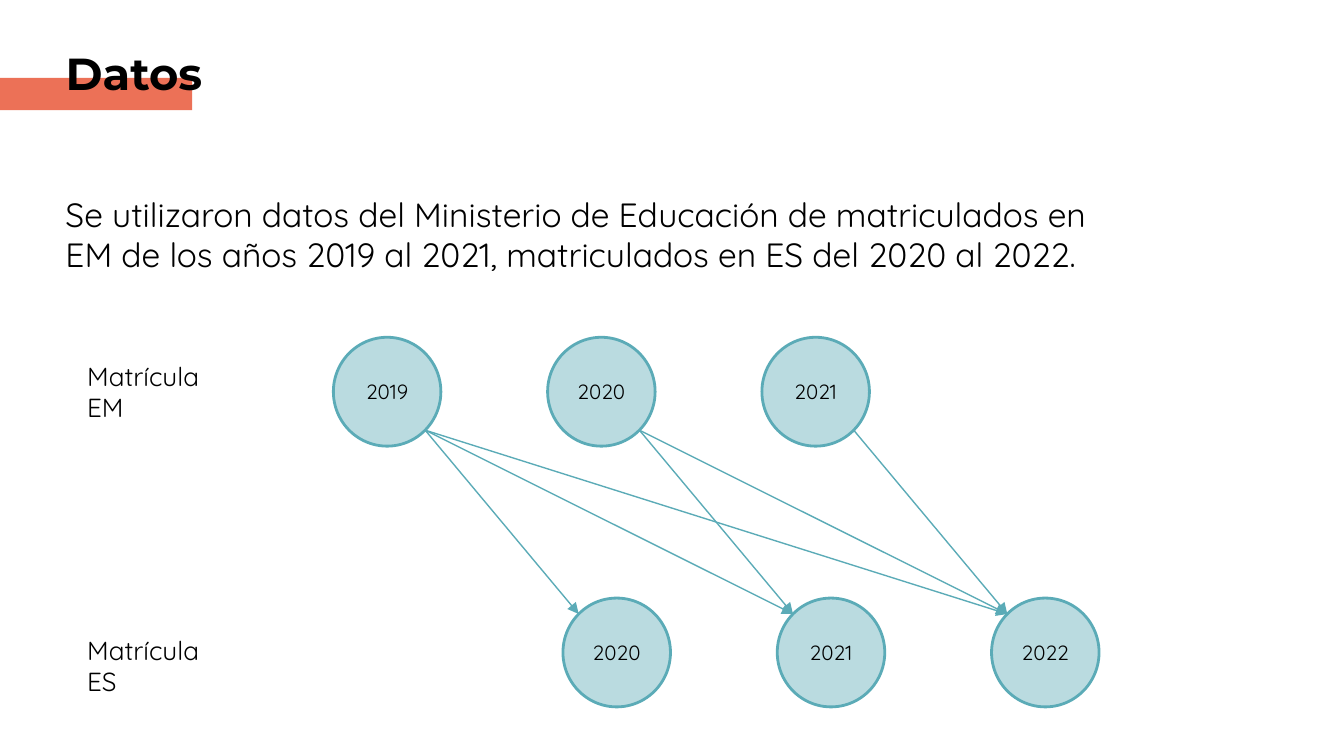
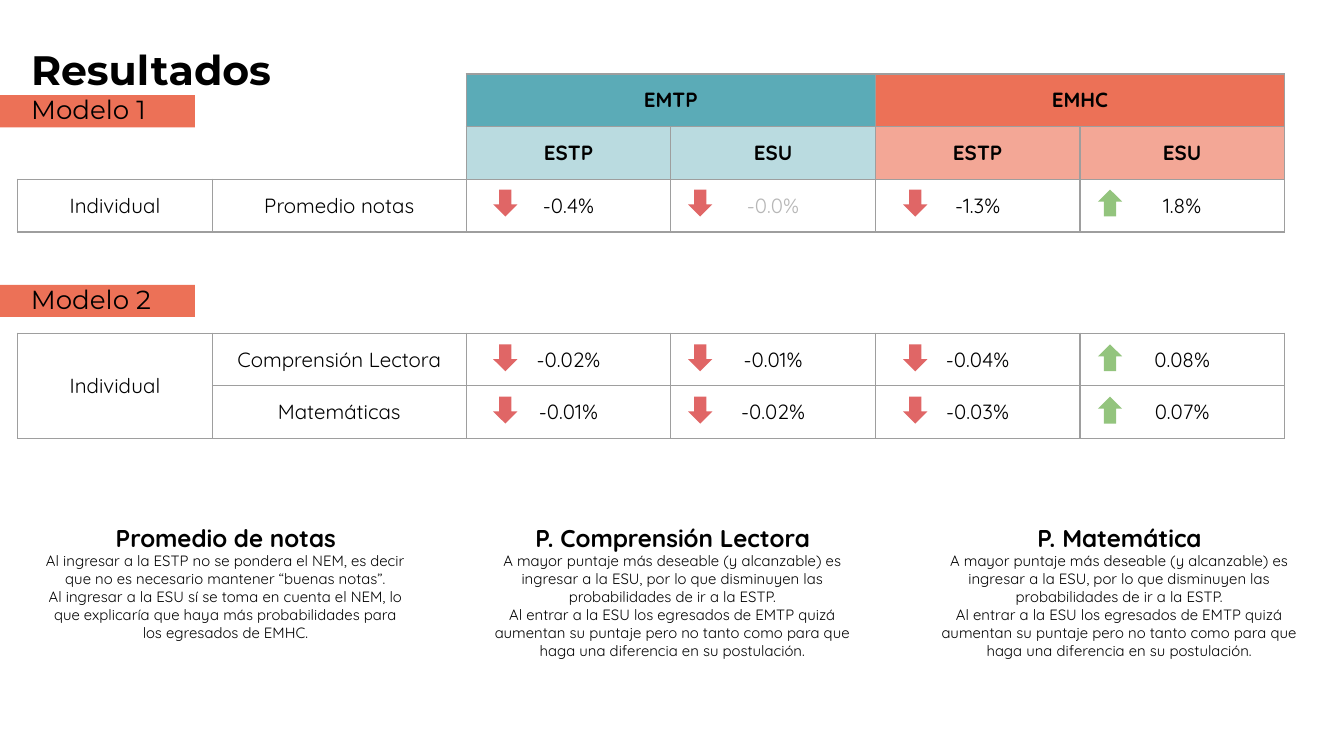
from dataclasses import dataclass
from itertools import product
from math import sqrt

from lxml.etree import SubElement
from pptx import Presentation
from pptx.dml.color import RGBColor
from pptx.enum.shapes import MSO_CONNECTOR, MSO_SHAPE
from pptx.enum.text import MSO_ANCHOR, MSO_AUTO_SIZE, PP_ALIGN
from pptx.oxml.ns import qn
from pptx.util import Pt


@dataclass(frozen=True)
class Theme:
    coral: str = "EC7157"
    teal: str = "5BABB7"
    red: str = "E06666"
    green: str = "93C47D"
    black: str = "000000"
    muted: str = "B7B7B7"
    border: str = "9E9E9E"
    heading: str = "Montserrat"
    body: str = "Quicksand"
    title_size: float = 24
    results_size: float = 22
    lead_size: float = 18
    label_size: float = 14
    note_title_size: float = 13
    cell_size: float = 11
    note_size: float = 8
    inset: float = 7.2
    thin: float = 0.75


T = Theme()


@dataclass(frozen=True)
class Box:
    left: float
    top: float
    width: float
    height: float

    def lengths(self) -> tuple:
        return Pt(self.left), Pt(self.top), Pt(self.width), Pt(self.height)


@dataclass(frozen=True)
class YearRow:
    label: str
    label_top: float
    left: float
    top: float
    years: tuple


@dataclass(frozen=True)
class Cell:
    text: str
    bold: bool = False
    colour: str = T.black
    fill: str = ""
    alpha: int = 100
    rows: int = 1
    cols: int = 1


@dataclass(frozen=True)
class Note:
    title: str
    paragraphs: tuple


# Slide 1: enrolment years
STEP, CIRCLE_W, CIRCLE_H = 114.8, 57.6, 58.3
EM = YearRow("Matrícula EM", 185.8, 178.6, 180.7, (2019, 2020, 2021))
ES = YearRow("Matrícula ES", 332.6, 301.6, 320.4, (2020, 2021, 2022))

# Slide 2: tables and notes
COLUMNS = (104.4, 136, 109.6, 109.6, 109.6, 109.6)
ROW_H = 28
TABLE_LEFT = 9.4
ARROW_LEFTS = {2: 264.2, 3: 368.6, 4: 483.8, 5: 588.2}

MODEL_1 = (
    (None, None, Cell("EMTP", True, fill=T.teal, cols=2), None,
     Cell("EMHC", True, fill=T.coral, cols=2), None),
    (None, None, *(Cell(name, True, fill=fill, alpha=alpha)
                   for fill, alpha in ((T.teal, 42), (T.coral, 62))
                   for name in ("ESTP", "ESU"))),
    (Cell("Individual"), Cell("Promedio notas"), Cell("-0.4%"),
     Cell("-0.0%", colour=T.muted), Cell("-1.3%"), Cell("1.8%")),
)
MODEL_2 = (
    (Cell("Individual", rows=2), *map(Cell, (
        "Comprensión Lectora", "-0.02%", "-0.01%", "-0.04%", "0.08%"))),
    (None, *map(Cell, ("Matemáticas", "-0.01%", "-0.02%", "-0.03%", "0.07%"))),
)

SCORE_TEXT = (
    "A mayor puntaje más deseable (y alcanzable) es ingresar a la ESU, por lo que "
    "disminuyen las probabilidades de ir a la ESTP.",
    "Al entrar a la ESU los egresados de EMTP quizá aumentan su puntaje pero no tanto "
    "como para que haga una diferencia en su postulación.",
)
NOTES = (
    Note("Promedio de notas", (
        "Al ingresar a la ESTP no se pondera el NEM, es decir que no es necesario "
        "mantener “buenas notas”.",
        "Al ingresar a la ESU sí se toma en cuenta el NEM, lo que explicaría que haya "
        "más probabilidades para los egresados de EMHC.")),
    Note("P. Comprensión Lectora", SCORE_TEXT),
    Note("P. Matemática", SCORE_TEXT),
)


# Text helpers
def style_run(r, size: float, font: str = T.body, bold: bool = False,
              colour: str = T.black) -> None:
    r.font.name, r.font.size, r.font.bold = font, Pt(size), bold
    r.font.color.rgb = RGBColor.from_string(colour)


def prepare_frame(tf, anchor=MSO_ANCHOR.TOP) -> None:
    tf.word_wrap, tf.auto_size = True, MSO_AUTO_SIZE.NONE
    tf.vertical_anchor = anchor
    tf.margin_left = tf.margin_right = tf.margin_top = tf.margin_bottom = Pt(T.inset)


def add_text(s, box: Box, text: str, size: float, font: str = T.body):
    tf = s.shapes.add_textbox(*box.lengths()).text_frame
    prepare_frame(tf)
    tf.text = text
    for p in tf.paragraphs:
        for r in p.runs:
            style_run(r, size, font)
    return tf


# Shape helpers
def set_fill(fill, parent, colour: str, alpha: int = 100) -> None:
    fill.solid()
    fill.fore_color.rgb = RGBColor.from_string(colour)
    if alpha < 100:
        clr = parent.find(qn("a:solidFill")).find(qn("a:srgbClr"))
        SubElement(clr, qn("a:alpha"), val=str(alpha * 1000))


def add_filled(s, kind, box: Box, colour: str, alpha: int = 100):
    sp = s.shapes.add_shape(kind, *box.lengths())
    sp.shadow.inherit = False
    set_fill(sp.fill, sp._element.spPr, colour, alpha)
    sp.line.fill.background()
    return sp


def add_band(s, top: float, width: float = 104.4):
    return add_filled(s, MSO_SHAPE.RECTANGLE, Box(0, top, width, 17.3), T.coral)


def add_title_slide(prs, title: str, box: Box, size: float, band_top: float,
                    band_width: float, subtitle: str = ""):
    s = prs.slides.add_slide(prs.slide_layouts[5])
    sp = s.shapes.title
    sp.left, sp.top, sp.width, sp.height = box.lengths()
    prepare_frame(sp.text_frame)
    sp.text_frame.text = title
    p = sp.text_frame.paragraphs[0]
    p.alignment = PP_ALIGN.LEFT
    style_run(p.runs[0], size, T.heading, True)
    if subtitle:
        r = p.add_run()
        r.text = subtitle
        style_run(r, T.label_size, T.heading)
    # The band lies behind the title
    band = add_band(s, band_top, band_width)
    sp._element.addprevious(band._element)
    return s


# Year diagram
def add_year_row(s, row: YearRow) -> None:
    add_text(s, Box(39.6, row.label_top, 85.7, 33.8), row.label, T.label_size)
    for i, year in enumerate(row.years):
        box = Box(row.left + i * STEP, row.top, CIRCLE_W, CIRCLE_H)
        sp = add_filled(s, MSO_SHAPE.OVAL, box, T.teal, 42)
        sp.line.color.rgb = RGBColor.from_string(T.teal)
        sp.line.width = Pt(1.5)
        tf = sp.text_frame
        prepare_frame(tf, MSO_ANCHOR.MIDDLE)
        tf.text = str(year)
        tf.paragraphs[0].alignment = PP_ALIGN.CENTER
        style_run(tf.paragraphs[0].runs[0], T.cell_size)


def diagonal_point(row: YearRow, i: int, sign: int) -> tuple:
    """Point on the circle at 45°: lower right for +1, upper left for -1."""
    reach = sign / sqrt(2)
    return (Pt(row.left + i * STEP + CIRCLE_W / 2 * (1 + reach)),
            Pt(row.top + CIRCLE_H / 2 * (1 + reach)))


def add_year_links(s) -> None:
    for (i, start), (j, end) in product(enumerate(EM.years), enumerate(ES.years)):
        if end <= start:
            continue
        line = s.shapes.add_connector(MSO_CONNECTOR.STRAIGHT,
                                      *diagonal_point(EM, i, 1),
                                      *diagonal_point(ES, j, -1))
        line.line.color.rgb = RGBColor.from_string(T.teal)
        line.line.width = Pt(T.thin)
        spPr = line._element.spPr
        SubElement(spPr.find(qn("a:ln")), qn("a:tailEnd"), type="triangle")
        SubElement(spPr, qn("a:effectLst"))


# Result tables
def add_borders(cell) -> None:
    tcPr = cell._tc.get_or_add_tcPr()
    for side in ("lnL", "lnR", "lnT", "lnB"):
        ln = SubElement(tcPr, qn(f"a:{side}"), w=str(Pt(T.thin)))
        SubElement(SubElement(ln, qn("a:solidFill")), qn("a:srgbClr"), val=T.border)


def fill_cell(cell, data: Cell) -> None:
    cell.margin_left = cell.margin_right = Pt(T.inset)
    cell.margin_top = cell.margin_bottom = Pt(T.inset)
    cell.vertical_anchor = MSO_ANCHOR.MIDDLE
    cell.text_frame.text = data.text
    p = cell.text_frame.paragraphs[0]
    p.alignment = PP_ALIGN.CENTER
    style_run(p.runs[0], T.cell_size, bold=data.bold, colour=data.colour)
    if data.fill:
        set_fill(cell.fill, cell._tc.tcPr, data.fill, data.alpha)


def add_results(s, top: float, rows: tuple) -> None:
    box = Box(TABLE_LEFT, top, sum(COLUMNS), ROW_H * len(rows))
    table = s.shapes.add_table(len(rows), len(COLUMNS), *box.lengths()).table
    table.first_row = table.horz_banding = False
    # Plain style without grid
    style = table._tbl.tblPr.find(qn("a:tableStyleId"))
    style.text = "{2D5ABB26-0587-4C30-8999-92F81FD0307C}"
    for column, width in zip(table.columns, COLUMNS):
        column.width = Pt(width)
    for i, row in enumerate(rows):
        table.rows[i].height = Pt(ROW_H)
        for j, data in enumerate(row):
            cell = table.cell(i, j)
            cell.margin_top = cell.margin_bottom = Pt(0)
            cell.fill.background()
            if not data:
                continue
            for m, n in product(range(data.rows), range(data.cols)):
                add_borders(table.cell(i + m, j + n))
            # Fill follows the borders in the cell properties
            cell.fill.background()
            tcPr = cell._tc.tcPr
            tcPr.append(tcPr.find(qn("a:noFill")))
            fill_cell(cell, data)
            if data.rows * data.cols > 1:
                cell.merge(table.cell(i + data.rows - 1, j + data.cols - 1))
            if data.text.endswith("%"):
                add_trend(s, ARROW_LEFTS[j], top + i * ROW_H + 6, data.text)
    # Merged-away cells keep their fill last as well
    for cell in table.iter_cells():
        tcPr = cell._tc.tcPr
        if tcPr.find(qn("a:noFill")) is not None:
            tcPr.append(tcPr.find(qn("a:noFill")))


def add_trend(s, left: float, top: float, value: str) -> None:
    falling = value.startswith("-")
    sp = add_filled(s, MSO_SHAPE.UP_ARROW, Box(left, top, 13, 14.4),
                    T.red if falling else T.green)
    sp.rotation = 180 if falling else 0


def add_note(s, left: float, note: Note) -> None:
    tf = add_text(s, Box(left, 272.9, 210.2, 83.5),
                  "\n".join((note.title, *note.paragraphs)), T.note_size)
    for p in tf.paragraphs:
        p.alignment = PP_ALIGN.CENTER
    style_run(tf.paragraphs[0].runs[0], T.note_title_size, bold=True)


# Slides
def build_data_slide(prs) -> None:
    s = add_title_slide(prs, "Datos", Box(28, 17.3, 372.2, 50.4), T.title_size, 41.8, 103)
    add_text(s, Box(28, 96.5, 588.2, 84.2),
             "Se utilizaron datos del Ministerio de Educación de matriculados en EM de los "
             "años 2019 al 2021, matriculados en ES del 2020 al 2022.", T.lead_size)
    for row in (EM, ES):
        add_year_row(s, row)
    add_year_links(s)


def build_results_slide(prs) -> None:
    s = add_title_slide(prs, "Resultados ", Box(TABLE_LEFT, 16.6, 176.4, 17.3),
                        T.results_size, 51, 104.4, "Modelo 1")
    add_results(s, 39.6, MODEL_1)
    add_band(s, 152.6)
    add_text(s, Box(TABLE_LEFT, 144.7, 176.4, 17.3), "Modelo 2", T.label_size, T.heading)
    add_results(s, 178.5, MODEL_2)
    for i, note in enumerate(NOTES):
        add_note(s, 15.8 + i * 239.4, note)


def main() -> None:
    prs = Presentation()
    prs.slide_width, prs.slide_height = Pt(720), Pt(405)
    build_data_slide(prs)
    build_results_slide(prs)
    prs.save("out.pptx")


if __name__ == "__main__":
    main()
